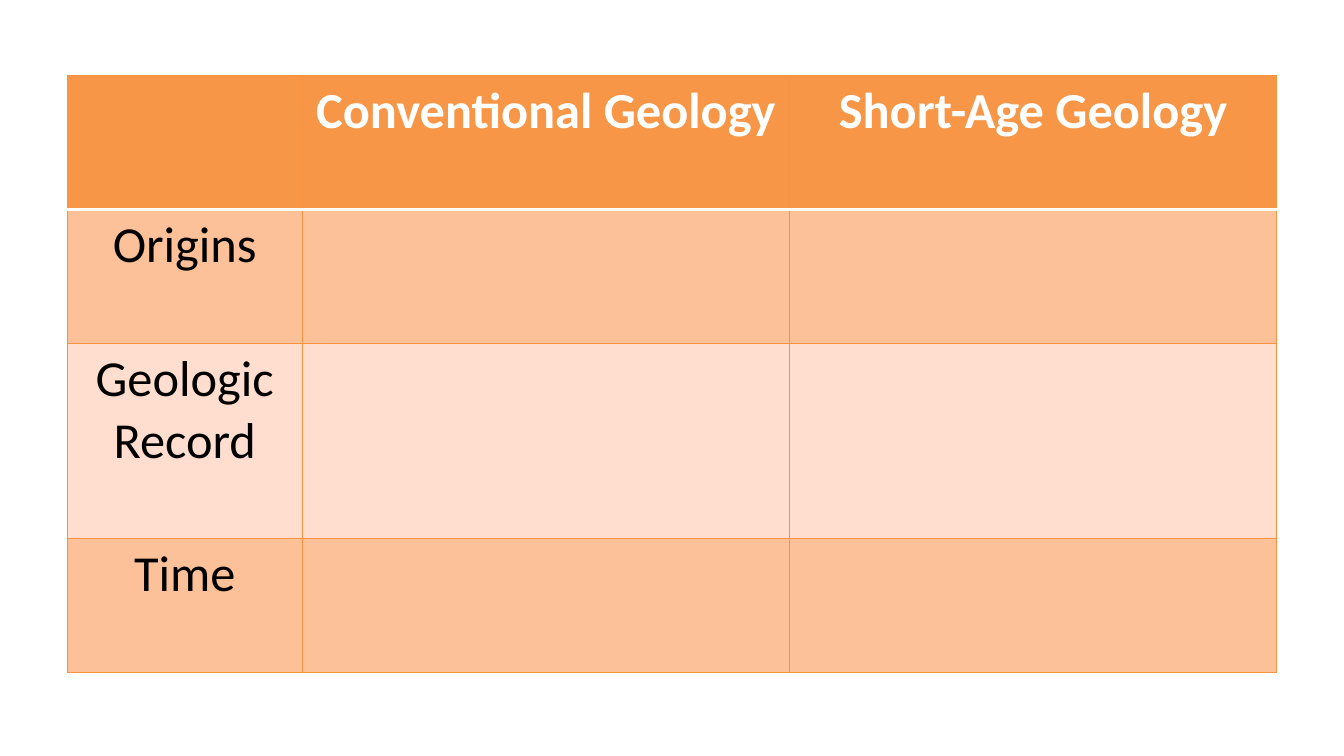
from dataclasses import dataclass

from lxml.etree import SubElement
from pptx import Presentation
from pptx.dml.color import RGBColor
from pptx.enum.text import PP_ALIGN
from pptx.oxml.ns import qn
from pptx.util import Inches, Pt


@dataclass(frozen=True)
class Theme:
    """Colours, type and line widths of the slide."""
    font: str = "Calibri"
    size: float = 36
    header: str = "F79646"
    band: str = "FCC198"
    plain: str = "FFDDCF"
    grid: str = "F69240"
    white: str = "FFFFFF"
    black: str = "000000"
    thin: float = 0.75
    thick: float = 2


THEME = Theme()
TOPICS = ["", "Origins", "Geologic\nRecord", "Time"]
VIEWS = ["Conventional Geology", "Short-Age Geology"]
COLUMN_SHARES = [7, 14.5, 14.5]
ROW_SHARES = [11, 11, 16, 11]


def write(cell, text, *, color, bold=False, align=PP_ALIGN.CENTER):
    """Write the text into a cell, one paragraph per line."""
    cell.text_frame.text = text
    for paragraph in cell.text_frame.paragraphs:
        paragraph.alignment = align
        for run in paragraph.runs:
            run.font.name = THEME.font
            run.font.size = Pt(THEME.size)
            run.font.bold = bold
            run.font.color.rgb = RGBColor.from_string(color)


def paint(cell, color):
    """Fill a cell with one colour."""
    cell.fill.solid()
    cell.fill.fore_color.rgb = RGBColor.from_string(color)


def rule(cell, white_side=None):
    """Draw the four borders of a cell, one of them optionally thick white."""
    properties = cell._tc.get_or_add_tcPr()
    for position, side in enumerate(("lnL", "lnR", "lnT", "lnB")):
        divider = side == white_side
        width = THEME.thick if divider else THEME.thin
        border = SubElement(properties, qn(f"a:{side}"), w=str(Pt(width)))
        fill = SubElement(border, qn("a:solidFill"))
        SubElement(fill, qn("a:srgbClr"), val=THEME.white if divider else THEME.grid)
        properties.insert(position, border)


def share(total, parts):
    """Split a length in proportion to the parts."""
    return [int(total * part / sum(parts)) for part in parts]


def add_comparison(slide, left, top, width, height):
    """Add the table that compares the two views topic by topic."""
    rows = [TOPICS[:1] + VIEWS] + [[topic, "", ""] for topic in TOPICS[1:]]
    comparison = slide.shapes.add_table(
        len(rows), len(COLUMN_SHARES), left, top, width, height).table
    comparison.horz_banding = False
    for column, size in zip(comparison.columns, share(width, COLUMN_SHARES)):
        column.width = size
    for row, size in zip(comparison.rows, share(height, ROW_SHARES)):
        row.height = size

    for number, texts in enumerate(rows):
        heading = number == 0
        background = THEME.header if heading else (THEME.plain, THEME.band)[number % 2]
        for cell, text in zip(comparison.rows[number].cells, texts):
            paint(cell, background)
            rule(cell, {0: "lnB", 1: "lnT"}.get(number))
            if text:
                write(cell, text, bold=heading,
                      color=THEME.white if heading else THEME.black)


def main():
    """Build and save the slide."""
    deck = Presentation()
    deck.slide_width, deck.slide_height = Inches(13.33), Inches(7.5)
    slide = deck.slides.add_slide(deck.slide_layouts[6])
    width, height = deck.slide_width, deck.slide_height
    add_comparison(slide, int(width * 0.05), int(height * 0.1),
                   int(width * 0.9), int(height * 0.79))
    deck.save("out.pptx")


if __name__ == "__main__":
    main()
